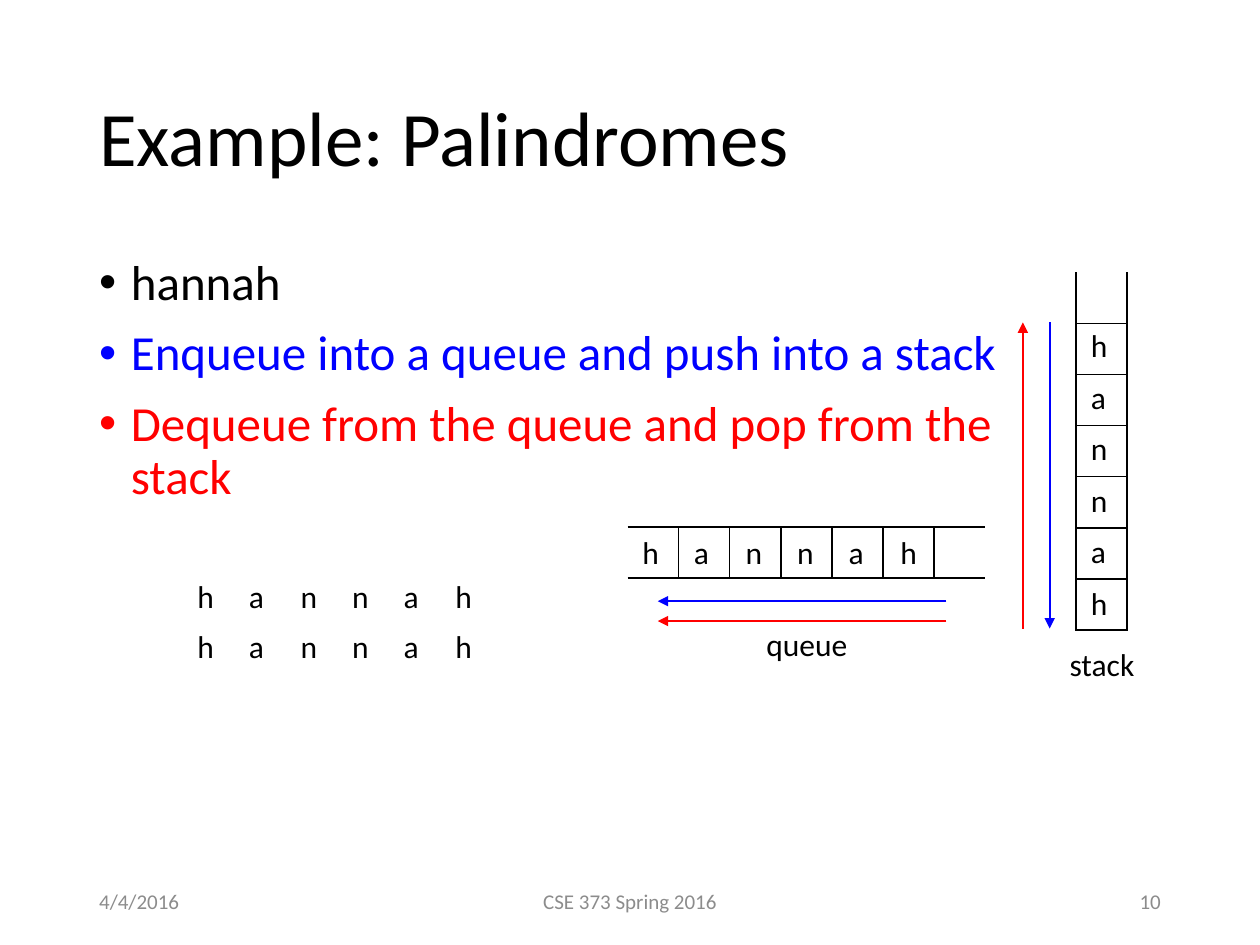
from lxml import etree
from pptx import Presentation
from pptx.dml.color import RGBColor
from pptx.enum.shapes import MSO_CONNECTOR
from pptx.enum.text import MSO_ANCHOR, PP_ALIGN
from pptx.oxml.ns import qn
from pptx.util import Cm, Pt

BLACK = RGBColor(0x00, 0x00, 0x00)
BLUE = RGBColor(0x00, 0x00, 0xFF)
RED = RGBColor(0xFF, 0x00, 0x00)
GRAY = RGBColor(0x8C, 0x8C, 0x8C)

LEFT, CENTER, RIGHT = PP_ALIGN.LEFT, PP_ALIGN.CENTER, PP_ALIGN.RIGHT
TOP, MIDDLE = MSO_ANCHOR.TOP, MSO_ANCHOR.MIDDLE
STRAIGHT = MSO_CONNECTOR.STRAIGHT

FONT = "Calibri"
WORD = "hannah"
CELL = 1.03
LETTER_PITCH = 1.04
LETTER_WIDTH = 0.99
LABEL_HEIGHT = 1.02
MARGIN = 1.75


def add_text(slide, text, left, top, width, height, size=18, color=BLACK,
             align=LEFT, anchor=TOP, line_spacing=None):
    shape = slide.shapes.add_textbox(Cm(left), Cm(top), Cm(width), Cm(height))
    frame = shape.text_frame
    frame.word_wrap = True
    frame.vertical_anchor = anchor
    format_paragraph(frame.paragraphs[0], text, size, color, align, line_spacing)
    return frame


def format_paragraph(paragraph, text, size, color, align=LEFT, line_spacing=None):
    paragraph.alignment = align
    paragraph.line_spacing = line_spacing
    run = paragraph.add_run()
    run.text = text
    run.font.name = FONT
    run.font.size = Pt(size)
    run.font.color.rgb = color


def add_bullets(slide, items, left, top, width, height):
    """Add one bulleted paragraph for each (text, color) pair."""
    shape = slide.shapes.add_textbox(Cm(left), Cm(top), Cm(width), Cm(height))
    frame = shape.text_frame
    frame.word_wrap = True
    for index, (text, color) in enumerate(items):
        paragraph = frame.add_paragraph() if index else frame.paragraphs[0]
        format_paragraph(paragraph, text, 28, color, line_spacing=0.9)
        paragraph.space_before = Pt(10)
        properties = paragraph._p.get_or_add_pPr()
        properties.set("marL", str(Cm(0.64)))
        properties.set("indent", str(-Cm(0.64)))
        etree.SubElement(properties, qn("a:buFont"), typeface="Arial")
        etree.SubElement(properties, qn("a:buChar"), char="•")


def add_letters(slide, left, top, step_x=0, step_y=0):
    """Spell the word with one text box per letter."""
    for index, letter in enumerate(WORD):
        add_text(slide, letter, left + index * step_x, top + index * step_y,
                 LETTER_WIDTH, LABEL_HEIGHT)


def set_borders(cell, open_sides):
    properties = cell._tc.get_or_add_tcPr()
    for side in "LRTB":
        line = etree.SubElement(properties, qn(f"a:ln{side}"), w=str(Pt(1)))
        if side in open_sides:
            etree.SubElement(line, qn("a:noFill"))
        else:
            fill = etree.SubElement(line, qn("a:solidFill"))
            etree.SubElement(fill, qn("a:srgbClr"), val=str(BLACK))


def add_cells(slide, left, top, rows, columns, first_open, last_open):
    """Add a grid of empty square cells that is open at its ends."""
    frame = slide.shapes.add_table(rows, columns, Cm(left), Cm(top),
                                   Cm(columns * CELL), Cm(rows * CELL))
    table = frame.table
    table.first_row = False
    table.horz_banding = False
    for part in table.columns:
        part.width = Cm(CELL)
    for part in table.rows:
        part.height = Cm(CELL)
    last = rows * columns - 1
    for index, cell in enumerate(table.iter_cells()):
        open_sides = first_open if index == 0 else last_open if index == last else ""
        set_borders(cell, open_sides)
        cell.fill.background()


def add_arrow(slide, start_x, start_y, end_x, end_y, color):
    arrow = slide.shapes.add_connector(STRAIGHT, Cm(start_x), Cm(start_y),
                                       Cm(end_x), Cm(end_y))
    arrow.line.color.rgb = color
    arrow.line.width = Pt(1)
    etree.SubElement(arrow.line._get_or_add_ln(), qn("a:tailEnd"), type="triangle")
    etree.SubElement(arrow._element.spPr, qn("a:effectLst"))


def add_queue(slide):
    add_cells(slide, 12.65, 10.62, 1, 7, "L", "R")
    add_letters(slide, 12.7, 10.62, step_x=LETTER_PITCH)
    for y, color in ((12.12, BLUE), (12.52, RED)):
        add_arrow(slide, 19.08, y, 13.26, y, color)
    add_text(slide, "queue", 13.51, 12.47, 5.51, LABEL_HEIGHT, align=CENTER)


def add_stack(slide):
    top, bottom = 6.5, 12.67
    add_cells(slide, 21.69, 5.49, 7, 1, "T", "")
    add_letters(slide, 21.74, 6.45, step_y=LETTER_PITCH)
    add_arrow(slide, 21.16, top, 21.16, bottom, BLUE)
    add_arrow(slide, 20.62, bottom, 20.62, top, RED)
    add_text(slide, "stack", 20.83, 12.88, 2.77, LABEL_HEIGHT, align=CENTER)


def add_footer(slide):
    for text, left, width, align in (
        ("4/4/2016", MARGIN, 5.72, LEFT),
        ("CSE 373 Spring 2016", 8.41, 8.58, CENTER),
        ("10", 17.93, 5.72, RIGHT),
    ):
        add_text(slide, text, left, 17.65, width, LABEL_HEIGHT, size=12,
                 color=GRAY, align=align, anchor=MIDDLE)


def main():
    presentation = Presentation()
    presentation.slide_width, presentation.slide_height = Cm(25.4), Cm(19.05)
    slide = presentation.slides.add_slide(presentation.slide_layouts[6])

    add_text(slide, "Example: Palindromes", MARGIN, 1.02, 21.9, 3.68, size=44,
             anchor=MIDDLE, line_spacing=0.9)
    add_bullets(slide, (
        ("hannah", BLACK),
        ("Enqueue into a queue and push into a stack", BLUE),
        ("Dequeue from the queue and pop from the stack", RED),
    ), MARGIN, 5.08, 18.75, 12.09)
    add_queue(slide)
    add_stack(slide)
    for top in (11.51, 12.52):
        add_letters(slide, 3.73, top, step_x=LETTER_PITCH)
    add_footer(slide)

    presentation.save("out.pptx")


if __name__ == "__main__":
    main()
